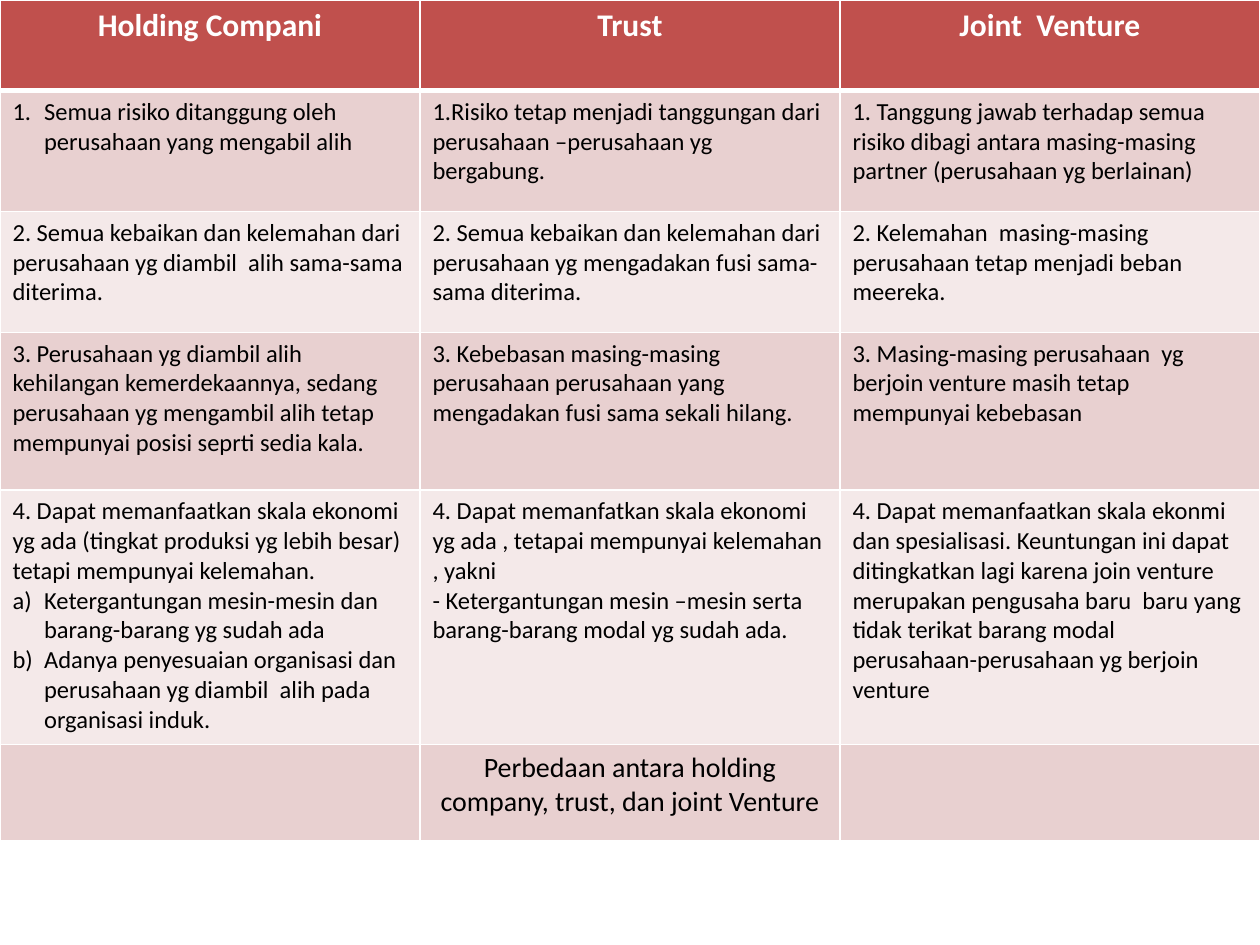
from dataclasses import dataclass

from pptx import Presentation
from pptx.dml.color import RGBColor as RGB
from pptx.enum.text import PP_ALIGN as ALIGN
from pptx.oxml import parse_xml
from pptx.oxml.ns import nsdecls
from pptx.util import Inches, Pt


@dataclass(frozen=True)
class Theme:
    """Colours, font and type sizes of the slide."""
    font: str = "Calibri"
    header_fill: RGB = RGB(0xC0, 0x50, 0x4D)
    bands: tuple = (RGB(0xE8, 0xD0, 0xD0), RGB(0xF4, 0xE9, 0xE9))
    white: RGB = RGB(255, 255, 255)
    black: RGB = RGB(0, 0, 0)
    header_size: int = 18
    body_size: int = 14
    caption_size: int = 16
    rule: int = 1
    header_rule: int = 3


THEME = Theme()
NUMBER, LETTER = "arabicPeriod", "alphaLcParenR"
HEADERS = ["Holding Compani", "Trust", "Joint  Venture"]
BODY = [
    [[("Semua risiko ditanggung oleh perusahaan yang mengabil alih", NUMBER)],
     ["1.Risiko tetap menjadi tanggungan dari perusahaan –perusahaan yg bergabung."],
     ["1. Tanggung jawab terhadap semua risiko dibagi antara masing-masing partner "
      "(perusahaan yg berlainan)"]],
    [["2. Semua kebaikan dan kelemahan dari perusahaan yg diambil  alih sama-sama diterima."],
     ["2. Semua kebaikan dan kelemahan dari perusahaan yg mengadakan fusi sama-sama diterima."],
     ["2. Kelemahan  masing-masing perusahaan tetap menjadi beban meereka."]],
    [["3. Perusahaan yg diambil alih kehilangan kemerdekaannya, sedang perusahaan yg "
      "mengambil alih tetap mempunyai posisi seprti sedia kala."],
     ["3. Kebebasan masing-masing perusahaan perusahaan yang mengadakan fusi sama sekali hilang."],
     ["3. Masing-masing perusahaan  yg berjoin venture masih tetap mempunyai kebebasan"]],
    [["4. Dapat memanfaatkan skala ekonomi yg ada (tingkat produksi yg lebih besar) "
      "tetapi mempunyai kelemahan.",
      ("Ketergantungan mesin-mesin dan barang-barang yg sudah ada", LETTER),
      ("Adanya penyesuaian organisasi dan perusahaan yg diambil  alih pada organisasi induk.",
       LETTER)],
     ["4. Dapat memanfatkan skala ekonomi yg ada , tetapai mempunyai kelemahan , yakni",
      "- Ketergantungan mesin –mesin serta barang-barang modal yg sudah ada."],
     ["4. Dapat memanfaatkan skala ekonmi  dan spesialisasi. Keuntungan ini dapat "
      "ditingkatkan lagi karena join venture merupakan pengusaha baru  baru yang tidak "
      "terikat barang modal  perusahaan-perusahaan yg berjoin venture"]],
]
CAPTION = "Perbedaan antara holding company, trust, dan joint Venture"
ROW_HEIGHTS = [0.72, 0.96, 0.96, 1.25, 2.02, 0.76]


def write(p, text, size=THEME.body_size, color=THEME.black, bold=False,
          align=ALIGN.LEFT, numbering=None):
    """Write one formatted paragraph, numbered with a hanging indent if asked."""
    p.alignment = align
    if numbering:
        pPr = p._p.get_or_add_pPr()
        pPr.set("marL", str(Inches(0.25)))
        pPr.set("indent", str(Inches(-0.25)))
        pPr.append(parse_xml(f'<a:buAutoNum {nsdecls("a")} type="{numbering}"/>'))
    r = p.add_run()
    r.text = text
    font = r.font
    font.name, font.size, font.bold = THEME.font, Pt(size), bold
    font.color.rgb = color


def paint_cell(cell, fill, top=THEME.rule, bottom=THEME.rule):
    """Fill a cell and rule its four sides in white."""
    cell.fill.solid()
    cell.fill.fore_color.rgb = fill
    tcPr = cell._tc.get_or_add_tcPr()
    sides = {"L": THEME.rule, "R": THEME.rule, "T": top, "B": bottom}
    for i, (side, width) in enumerate(sides.items()):
        tcPr.insert(i, parse_xml(
            f'<a:ln{side} {nsdecls("a")} w="{Pt(width)}"><a:solidFill>'
            f'<a:srgbClr val="{THEME.white}"/></a:solidFill></a:ln{side}>'))


def fill_header(cells):
    """Write the column headings."""
    for cell, text in zip(cells, HEADERS):
        paint_cell(cell, THEME.header_fill, bottom=THEME.header_rule)
        write(cell.text_frame.paragraphs[0], text, size=THEME.header_size,
              color=THEME.white, bold=True, align=ALIGN.CENTER)


def fill_body_cell(cell, items):
    """Write plain or numbered paragraphs into one cell."""
    tf = cell.text_frame
    for i, item in enumerate(items):
        text, numbering = (item, None) if isinstance(item, str) else item
        p = tf.add_paragraph() if i else tf.paragraphs[0]
        write(p, text, numbering=numbering)


def add_comparison(slide, left, top, width):
    """Place the comparison table with its header, banded rows and caption row."""
    table = slide.shapes.add_table(
        len(ROW_HEIGHTS), len(HEADERS), Inches(left), Inches(top),
        Inches(width), Inches(sum(ROW_HEIGHTS))).table
    for row, height in zip(table.rows, ROW_HEIGHTS):
        row.height = Inches(height)
    header, *rows = [list(row.cells) for row in table.rows]
    fill_header(header)
    for i, cells in enumerate(rows):
        for cell in cells:
            paint_cell(cell, THEME.bands[i % 2], top=THEME.rule if i else THEME.header_rule)
    for cells, texts in zip(rows, BODY):
        for cell, items in zip(cells, texts):
            fill_body_cell(cell, items)
    write(rows[-1][1].text_frame.paragraphs[0], CAPTION,
          size=THEME.caption_size, align=ALIGN.CENTER)


def main():
    """Build and save the slide."""
    prs = Presentation()
    prs.slide_width, prs.slide_height = Inches(10), Inches(7.5)
    s = prs.slides.add_slide(prs.slide_layouts[6])
    add_comparison(s, 0, 0, 10)
    prs.save("out.pptx")


if __name__ == "__main__":
    main()
